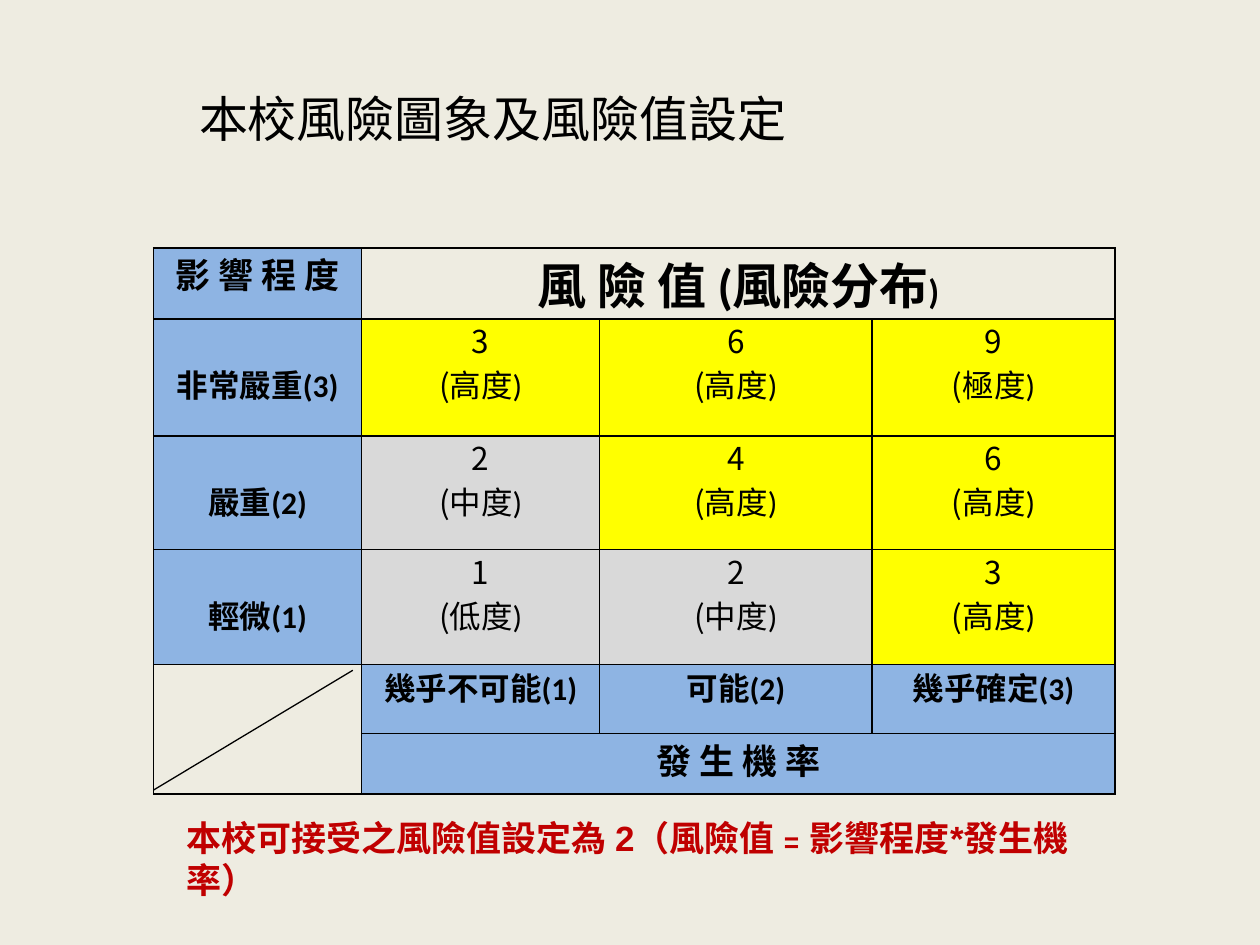
from lxml import etree
from pptx import Presentation
from pptx.dml.color import RGBColor
from pptx.enum.shapes import MSO_CONNECTOR
from pptx.enum.text import MSO_ANCHOR, PP_ALIGN
from pptx.oxml.ns import qn
from pptx.util import Inches, Pt

PAPER = RGBColor(0xEE, 0xEC, 0xE1)
BLACK = RGBColor(0, 0, 0)
BLUE = RGBColor(0x8E, 0xB4, 0xE3)
YELLOW = RGBColor(0xFF, 0xFF, 0)
GREY = RGBColor(0xD9, 0xD9, 0xD9)
RED = RGBColor(0xC0, 0, 0)

LATIN = "Calibri"
CJK = "Noto Sans CJK SC"
COLUMN_WIDTHS = (1.65, 1.89, 2.16, 1.93)
ROW_HEIGHTS = (0.55, 0.93, 0.9, 0.91, 0.55, 0.48)
IMPACTS = (("非常嚴重", 3), ("嚴重", 2), ("輕微", 1))
LIKELIHOODS = (("幾乎不可能", 1), ("可能", 2), ("幾乎確定", 3))
LEVELS = {1: "低度", 2: "中度", 3: "高度", 4: "高度", 6: "高度", 9: "極度"}
ACCEPTABLE_RISK = 2
SCORE_LEADING = Pt(25)


def format_run(run, size, name=LATIN, bold=False, color=BLACK):
    run.font.size = Pt(size)
    run.font.name = name
    run.font.bold = bold
    run.font.color.rgb = color


def add_title(slide, left, top, width, height):
    title = slide.shapes.title
    title.left, title.top, title.width, title.height = left, top, width, height
    title.text_frame.text = "本校風險圖象及風險值設定"
    title.text_frame.vertical_anchor = MSO_ANCHOR.MIDDLE
    heading = title.text_frame.paragraphs[0]
    heading.alignment = PP_ALIGN.CENTER
    format_run(heading.runs[0], 28, "Arial")


def outline_cell(cell):
    properties = cell._tc.get_or_add_tcPr()
    for side in ("a:lnL", "a:lnR", "a:lnT", "a:lnB"):
        border = etree.SubElement(properties, qn(side), w=str(Pt(1)))
        fill = etree.SubElement(border, qn("a:solidFill"))
        etree.SubElement(fill, qn("a:srgbClr"), val=str(BLACK))


def prepare_cell(cell):
    cell.margin_left = cell.margin_right = Inches(0.07)
    cell.margin_top = cell.margin_bottom = 0
    outline_cell(cell)
    cell.fill.background()


def fill_cell(cell, color):
    cell.fill.solid()
    cell.fill.fore_color.rgb = color


def write_label(cell, label, size=18):
    cell.text_frame.text = label
    paragraph = cell.text_frame.paragraphs[0]
    paragraph.alignment = PP_ALIGN.CENTER
    format_run(paragraph.runs[0], size, bold=True)
    return paragraph


def write_score(cell, score):
    fill_cell(cell, YELLOW if score > ACCEPTABLE_RISK else GREY)
    cell.text_frame.text = f"{score}\n("
    for paragraph in cell.text_frame.paragraphs:
        paragraph.alignment = PP_ALIGN.CENTER
        paragraph.line_spacing = SCORE_LEADING
        format_run(paragraph.runs[0], 18, CJK)
    level = cell.text_frame.paragraphs[1].add_run()
    level.text = f"{LEVELS[score]})"
    format_run(level, 18)


def add_risk_matrix(slide, left, top, width, height):
    matrix = slide.shapes.add_table(
        len(ROW_HEIGHTS), len(COLUMN_WIDTHS), left, top, width, height
    ).table
    matrix.first_row = matrix.horz_banding = False
    for column, column_width in zip(matrix.columns, COLUMN_WIDTHS):
        column.width = Inches(column_width)
    for row, row_height in zip(matrix.rows, ROW_HEIGHTS):
        row.height = Inches(row_height)
    for cell in matrix.iter_cells():
        prepare_cell(cell)

    matrix.cell(0, 1).merge(matrix.cell(0, 3))
    matrix.cell(4, 0).merge(matrix.cell(5, 0))
    matrix.cell(5, 1).merge(matrix.cell(5, 3))

    write_label(matrix.cell(0, 0), "影 響 程 度", 20)
    fill_cell(matrix.cell(0, 0), BLUE)
    heading = write_label(matrix.cell(0, 1), "風 險 值 (風險分布", 28)
    bracket = heading.add_run()
    bracket.text = ")"
    format_run(bracket, 20, bold=True)

    for row, (impact, weight) in enumerate(IMPACTS, start=1):
        impact_cell = matrix.cell(row, 0)
        label = write_label(impact_cell, f"{impact}({weight})")
        label.line_spacing = SCORE_LEADING
        impact_cell.margin_top = SCORE_LEADING
        fill_cell(impact_cell, BLUE)
        for column, (_, chance) in enumerate(LIKELIHOODS, start=1):
            write_score(matrix.cell(row, column), weight * chance)

    for column, (likelihood, chance) in enumerate(LIKELIHOODS, start=1):
        write_label(matrix.cell(4, column), f"{likelihood}({chance})")
        fill_cell(matrix.cell(4, column), BLUE)
    write_label(matrix.cell(5, 1), "發 生 機 率", 20)
    fill_cell(matrix.cell(5, 1), BLUE)


def add_corner_diagonal(slide, left, top, width, height):
    diagonal = slide.shapes.add_connector(
        MSO_CONNECTOR.STRAIGHT, left, top + height, left + width, top
    )
    diagonal.line.color.rgb = BLACK
    diagonal.line.width = Pt(0.75)
    etree.SubElement(diagonal._element.spPr, qn("a:effectLst"))


def add_threshold_note(slide, left, top, width, height):
    note = slide.shapes.add_textbox(left, top, width, height).text_frame
    note.word_wrap = True
    note.text = "本校可接受之風險值設定為 2（風險值﹦影響程度*發生機率）"
    format_run(note.paragraphs[0].runs[0], 20, "Arial", True, RED)


def main():
    deck = Presentation()
    deck.slide_width, deck.slide_height = Inches(10), Inches(7.5)
    slide = deck.slides.add_slide(deck.slide_layouts[5])
    slide.background.fill.solid()
    slide.background.fill.fore_color.rgb = PAPER
    add_title(slide, Inches(-0.59), Inches(0.31), Inches(9), Inches(1.25))
    add_risk_matrix(slide, Inches(1.22), Inches(1.97), Inches(7.64), Inches(4.31))
    add_threshold_note(slide, Inches(1.38), Inches(6.43), Inches(7.72), Inches(0.44))
    add_corner_diagonal(slide, Inches(1.22), Inches(5.32), Inches(1.58), Inches(0.95))
    deck.save("out.pptx")


if __name__ == "__main__":
    main()
